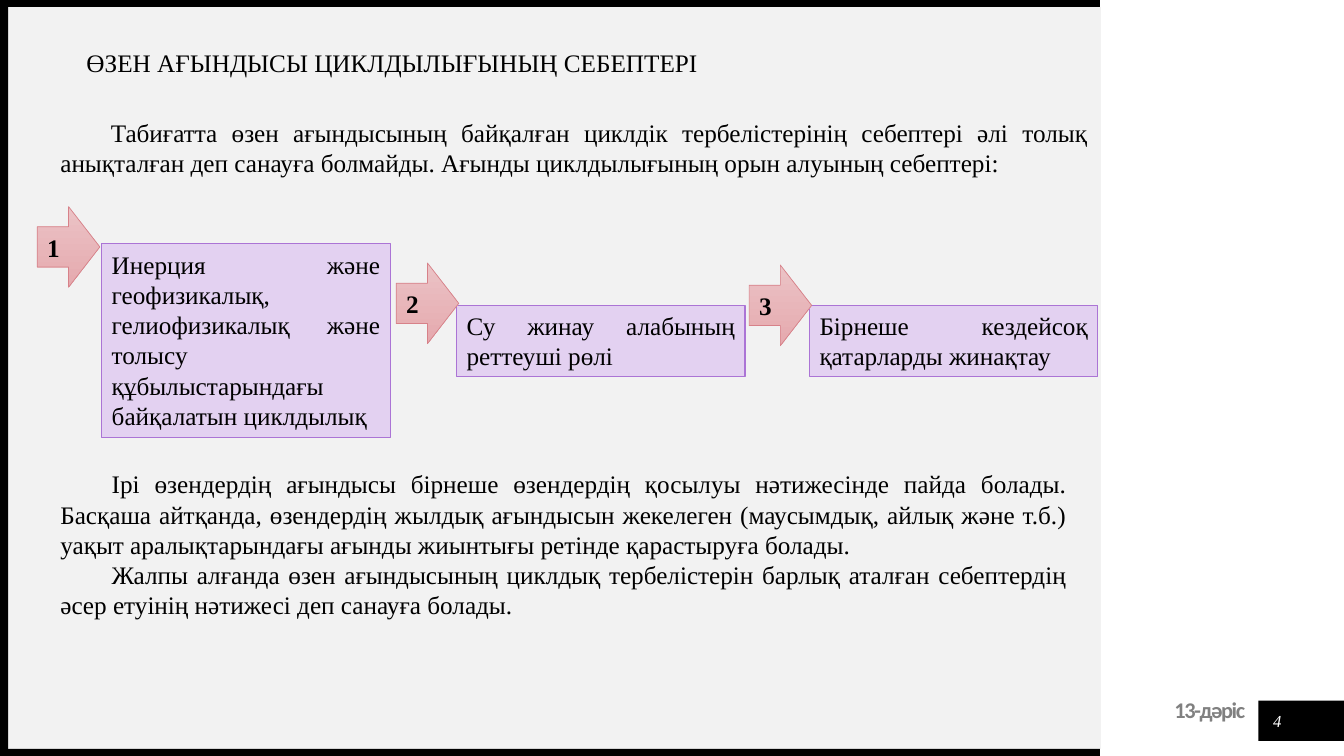
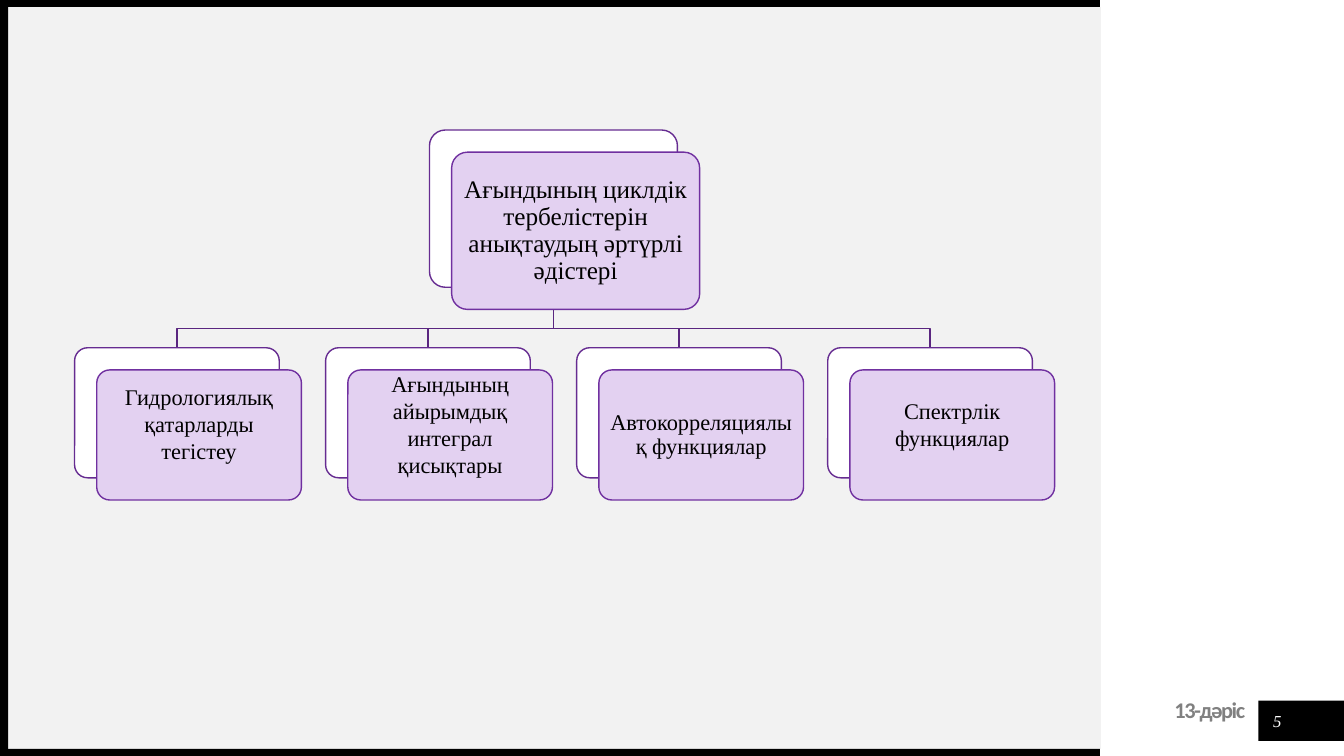
from pptx import Presentation
from pptx.dml.color import RGBColor
from pptx.enum.shapes import MSO_SHAPE as SHAPE
from pptx.enum.text import MSO_ANCHOR as ANCHOR, PP_ALIGN as ALIGN
from pptx.util import Inches, Pt

BLACK, WHITE, PANEL, GRAY = "000000", "FFFFFF", "F2F2F2", "808080"
LILAC, LILAC_EDGE = "E3D1F1", "AB74D5"
PURPLE, BACK_EDGE, BRANCH = "7030A0", "662C91", "5A2680"
ROSE_TOP, ROSE_BOTTOM, ROSE_EDGE = "EBC3C6", "E5A9AE", "D78189"
SERIF, SANS = "Times New Roman", "Calibri"
DEFAULT_INSETS = (0.1, 0.05, 0.1, 0.05)


def rgb(value):
    return RGBColor.from_string(value)


class Deck:
    """Holds the presentation, its style and the current slide."""

    def __init__(self):
        self.prs = Presentation()
        self.prs.slide_width, self.prs.slide_height = Inches(13.33), Inches(7.5)
        self.shapes = None

    def new_slide(self, number):
        """Add a slide with the panel, black frame, footer and page number."""
        self.shapes = self.prs.slides.add_slide(self.prs.slide_layouts[6]).shapes
        self.shape(0.08, 0.07, 10.84, 7.36, PANEL)
        for band in ((0, 7.43, 10.91, 0.07), (0, 0, 10.91, 0.07),
                     (0, 0, 0.08, 7.5), (12.48, 6.95, 0.85, 0.4)):
            self.shape(*band, BLACK)
        p = self.text(10.53, 6.94, 1.82, 0.24, ["13-дәріс"], size=16, font=SANS,
                      color=GRAY, bold=True, align=ALIGN.RIGHT,
                      insets=(0, 0.04, 0, 0))
        p.line_spacing = Pt(14)
        p.runs[0]._r.get_or_add_rPr().set("spc", "-100")
        self.text(12.52, 7, 0.3, 0.3, [str(number)], size=12, color=WHITE,
                  italic=True, align=ALIGN.CENTER, anchor=ANCHOR.MIDDLE,
                  insets=(0, 0, 0, 0))

    def shape(self, x, y, w, h, fill, line=None, width=1, kind=SHAPE.RECTANGLE):
        """Add a preset shape; a pair of fills makes a vertical gradient."""
        s = self.shapes.add_shape(kind, Inches(x), Inches(y), Inches(w), Inches(h))
        s.shadow.inherit = False
        if isinstance(fill, tuple):
            s.fill.gradient()
            s.fill.gradient_angle = 270
            for stop, color in zip(s.fill.gradient_stops, fill):
                stop.color.rgb = rgb(color)
        else:
            s.fill.solid()
            s.fill.fore_color.rgb = rgb(fill)
        self.outline(s, line, width)
        return s

    def outline(self, s, color, width):
        if color:
            s.line.color.rgb = rgb(color)
            s.line.width = Pt(width)
        else:
            s.line.fill.background()

    def text(self, x, y, w, h, paragraphs, wrap=True, **style):
        box = self.shapes.add_textbox(Inches(x), Inches(y), Inches(w), Inches(h))
        p = self.set_text(box, paragraphs, **style)
        box.text_frame.word_wrap = wrap
        return p

    def set_text(self, s, paragraphs, size=18, font=SERIF, color=BLACK, bold=False,
                 italic=False, align=ALIGN.LEFT, anchor=ANCHOR.TOP, indent=0,
                 spacing=None, insets=DEFAULT_INSETS):
        """Fill a shape with paragraphs and return the last one."""
        tf = s.text_frame
        tf.word_wrap, tf.vertical_anchor = True, anchor
        (tf.margin_left, tf.margin_top,
         tf.margin_right, tf.margin_bottom) = map(Inches, insets)
        for i, content in enumerate(paragraphs):
            p = tf.add_paragraph() if i else tf.paragraphs[0]
            p.add_run().text = content
            p.alignment = align
            if spacing:
                p.line_spacing = spacing
            if indent:
                p._p.get_or_add_pPr().set("indent", str(Inches(indent)))
            f = p.font
            f.name, f.size, f.bold, f.italic = font, Pt(size), bold, italic
            f.color.rgb = rgb(color)
        return p

    def reason(self, number, x, y, h, arrow_x, arrow_y, content):
        """Add a lilac box with its numbered arrow."""
        box = self.shape(x, y, 2.86, h, LILAC, LILAC_EDGE, 0.75)
        self.set_text(box, [content], align=ALIGN.JUSTIFY)
        arrow = self.shape(arrow_x, arrow_y, 0.62, 0.8, (ROSE_TOP, ROSE_BOTTOM),
                           ROSE_EDGE, 0.5, SHAPE.RIGHT_ARROW)
        self.set_text(arrow, [str(number)], bold=True, anchor=ANCHOR.MIDDLE)

    def card(self, x, y, w, h, content, **style):
        """Add a rounded card lying over a white one."""
        for shift, fill, line in ((0, WHITE, BACK_EDGE), (0.22, LILAC, PURPLE)):
            s = self.shape(x + shift, y + shift, w, h, fill, line,
                           kind=SHAPE.ROUNDED_RECTANGLE)
            s.adjustments[0] = 0.1
        self.set_text(s, [content], align=ALIGN.CENTER, anchor=ANCHOR.MIDDLE, **style)

    def branch(self, *points):
        start, *rest = [(Inches(x), Inches(y)) for x, y in points]
        builder = self.shapes.build_freeform(*start)
        builder.add_line_segments(rest, close=False)
        s = builder.convert_to_shape()
        s.shadow.inherit = False
        s.fill.background()
        self.outline(s, BRANCH, 1)


def causes_slide(deck):
    deck.new_slide(4)
    deck.text(0.76, 0.42, 6.33, 0.4, ["ӨЗЕН АҒЫНДЫСЫ ЦИКЛДЫЛЫҒЫНЫҢ СЕБЕПТЕРІ"],
              wrap=False)
    deck.text(0.5, 1.11, 10.39, 0.71, [
        "Табиғатта өзен ағындысының байқалған циклдік тербелістерінің себептері "
        "әлі толық анықталған деп санауға болмайды. Ағынды циклдылығының орын "
        "алуының себептері:"], align=ALIGN.JUSTIFY, indent=0.5)
    reasons = (
        (1.01, 2.42, 1.92, 0.37, 2.05,
         "Инерция және геофизикалық, гелиофизикалық және толысу "
         "құбылыстарындағы байқалатын циклдылық"),
        (4.53, 3.03, 0.71, 3.93, 2.61, "Су жинау алабының реттеуші рөлі"),
        (8.03, 3.03, 0.71, 7.43, 2.63, "Бірнеше кездейсоқ қатарларды жинақтау"),
    )
    for number, reason in enumerate(reasons, 1):
        deck.reason(number, *reason)
    deck.text(0.5, 4.6, 10.18, 1.62, [
        "Ірі өзендердің ағындысы бірнеше өзендердің қосылуы нәтижесінде пайда "
        "болады. Басқаша айтқанда, өзендердің жылдық ағындысын жекелеген "
        "(маусымдық, айлық және т.б.) уақыт аралықтарындағы ағынды жиынтығы "
        "ретінде қарастыруға болады.",
        "Жалпы алғанда өзен ағындысының циклдық тербелістерін барлық аталған "
        "себептердің әсер етуінің нәтижесі деп санауға болады."],
        align=ALIGN.JUSTIFY, indent=0.51)


def methods_slide(deck):
    deck.new_slide(5)
    left, top, pitch, w, h = 0.74, 3.45, 2.49, 2.03, 1.29
    root_x, root_y, root_w, root_h = 4.26, 1.29, 2.46, 1.56
    middle, fork = root_x + root_w / 2, 3.26
    even, raised = (0.07,) * 4, (0.07, 0.07, 0.07, 0.29)
    methods = (
        ("Гидрологиялық қатарларды тегістеу", raised, None),
        ("Ағындының айырымдық интеграл қисықтары", raised, None),
        ("Автокорреляциялық функциялар", even, 0.9),
        ("Спектрлік функциялар", raised, None),
    )
    lefts = [left + i * pitch for i in range(len(methods))]
    for x in lefts:
        center = x + w / 2
        deck.branch((middle, root_y + root_h), (middle, fork),
                    (center, fork), (center, top))
    deck.card(root_x, root_y, root_w, root_h,
              "Ағындының циклдік тербелістерін анықтаудың әртүрлі әдістері",
              insets=even, spacing=0.9)
    for x, (content, insets, spacing) in zip(lefts, methods):
        deck.card(x, top, w, h, content, size=16, insets=insets, spacing=spacing)


def main():
    deck = Deck()
    causes_slide(deck)
    methods_slide(deck)
    deck.prs.save("out.pptx")


if __name__ == "__main__":
    main()
